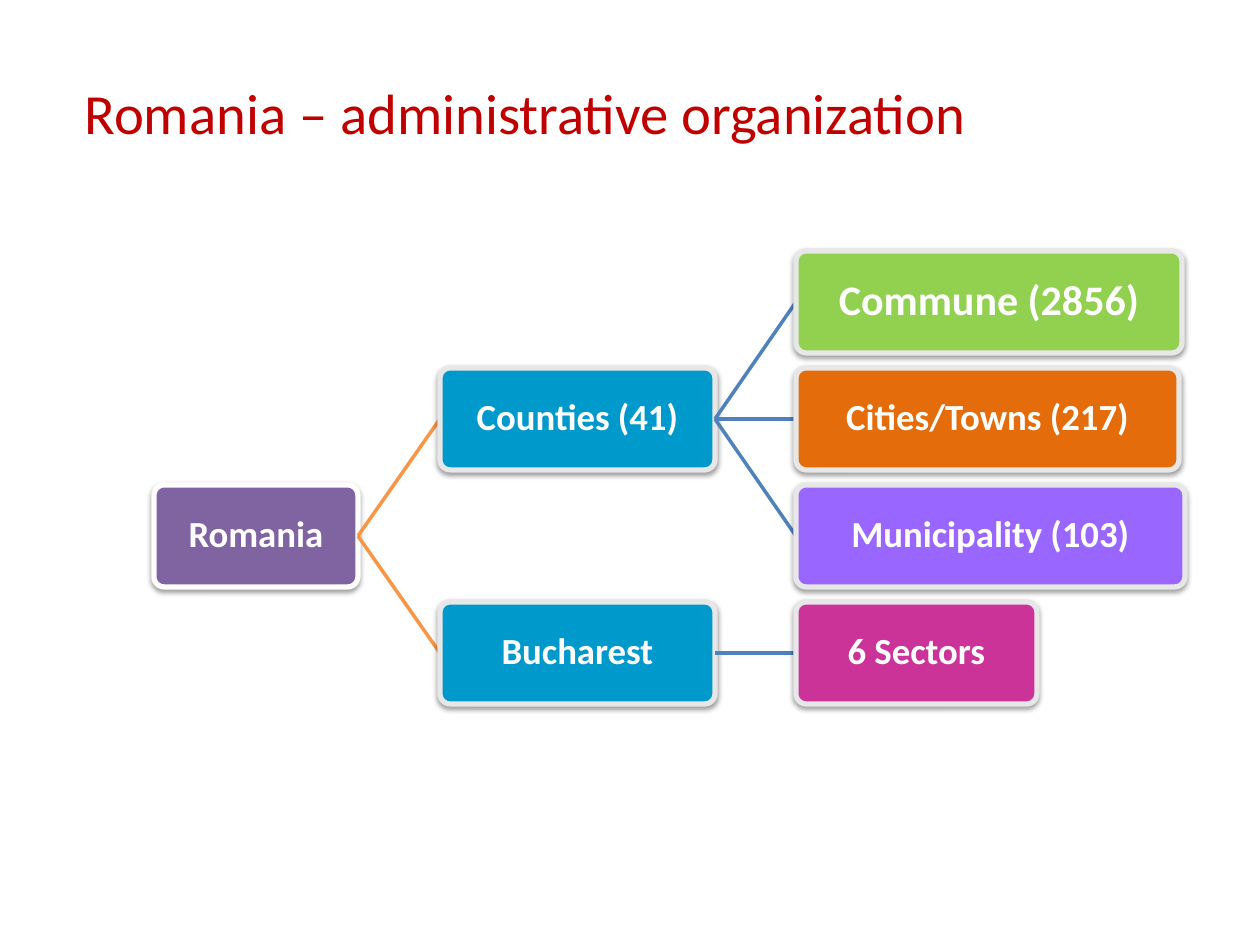
from dataclasses import dataclass
from typing import Optional

from lxml.etree import SubElement
from pptx import Presentation
from pptx.dml.color import RGBColor
from pptx.enum.shapes import MSO_CONNECTOR, MSO_SHAPE
from pptx.enum.text import MSO_ANCHOR, PP_ALIGN
from pptx.oxml.ns import qn
from pptx.util import Emu, Pt

EMU_PER_PX = 914400 / 126
FONT = "Calibri"
COLORS = {
    "title": "C00000", "white": "FFFFFF", "border": "E7E7E7", "shadow": "000000",
    "country": "8064A2", "region": "0099CC", "commune": "92D050", "city": "E46C0A",
    "municipality": "9966FF", "sector": "CC3399",
    "country link": "F79646", "region link": "4F81BD",
}

# Tree grid: three columns, four rows
COLUMNS = (154, 440, 796)
FIRST_ROW, ROW_PITCH, BOX_HEIGHT = 251, 117, 102


@dataclass(frozen=True)
class Node:
    text: str
    column: int
    row: int
    width: int
    fill: str
    parent: Optional["Node"] = None
    link: str = "region link"
    border: str = "border"
    size: int = 21
    inset: int = 1

    @property
    def left(self) -> int:
        return COLUMNS[self.column]

    @property
    def top(self) -> int:
        return FIRST_ROW + self.row * ROW_PITCH

    @property
    def right(self) -> int:
        return self.left + self.width

    @property
    def middle(self) -> int:
        return self.top + BOX_HEIGHT // 2


ROMANIA = Node("Romania", 0, 2, 204, "country", border="white")
COUNTIES = Node("Counties (41)", 1, 1, 275, "region", ROMANIA, "country link")
BUCHAREST = Node("Bucharest", 1, 3, 275, "region", ROMANIA, "country link")
NODES = (
    ROMANIA,
    COUNTIES,
    Node("Commune (2856)", 2, 0, 386, "commune", COUNTIES, size=24, inset=2),
    Node("Cities/Towns (217)", 2, 1, 383, "city", COUNTIES),
    Node("Municipality (103)", 2, 2, 389, "municipality", COUNTIES),
    BUCHAREST,
    Node("6 Sectors", 2, 3, 241, "sector", BUCHAREST),
)


def px(value: int) -> Emu:
    return Emu(round(value * EMU_PER_PX))


def color(name: str) -> RGBColor:
    return RGBColor.from_string(COLORS[name])


def write_text(frame, text: str, size: float, color_name: str, bold: bool = False) -> None:
    frame.word_wrap = True
    frame.vertical_anchor = MSO_ANCHOR.MIDDLE
    paragraph = frame.paragraphs[0]
    paragraph.alignment = PP_ALIGN.CENTER
    run = paragraph.add_run()
    run.text = text
    run.font.name = FONT
    run.font.size = Pt(size)
    run.font.bold = bold
    run.font.color.rgb = color(color_name)


def add_shadow(shape) -> None:
    shape.shadow.inherit = False
    effects = shape._element.spPr.find(qn("a:effectLst"))
    shadow = SubElement(effects, qn("a:outerShdw"), blurRad=str(Pt(3.1)),
                        dist=str(Pt(1.6)), dir="5400000", rotWithShape="0")
    shade = SubElement(shadow, qn("a:srgbClr"), val=COLORS["shadow"])
    SubElement(shade, qn("a:alpha"), val="38000")


def add_link(slide, node: Node) -> None:
    parent = node.parent
    connector = slide.shapes.add_connector(
        MSO_CONNECTOR.STRAIGHT, px(parent.right), px(parent.middle),
        px(node.left), px(node.middle))
    connector.line.color.rgb = color(node.link)
    connector.line.width = Pt(2)
    SubElement(connector._element.spPr, qn("a:effectLst"))


def add_box(slide, node: Node) -> None:
    shape = slide.shapes.add_shape(
        MSO_SHAPE.ROUNDED_RECTANGLE, px(node.left), px(node.top),
        px(node.width), px(BOX_HEIGHT))
    shape.adjustments[0] = 0.1
    shape.fill.solid()
    shape.fill.fore_color.rgb = color(node.fill)
    shape.line.color.rgb = color(node.border)
    shape.line.width = Pt(3)
    add_shadow(shape)
    frame = shape.text_frame
    frame.margin_left = frame.margin_right = px(node.inset)
    frame.margin_top = frame.margin_bottom = px(node.inset)
    write_text(frame, node.text, node.size, "white", bold=True)
    frame.paragraphs[0].line_spacing = 0.9


def main() -> None:
    presentation = Presentation()
    presentation.slide_width = px(1260)
    presentation.slide_height = px(945)
    slide = presentation.slides.add_slide(presentation.slide_layouts[6])

    # Title
    title = slide.shapes.add_textbox(px(63), px(38), px(924), px(147))
    write_text(title.text_frame, "Romania – administrative organization", 32.4, "title")

    # Administrative tree
    for node in NODES:
        if node.parent:
            add_link(slide, node)
        add_box(slide, node)

    presentation.save("out.pptx")


if __name__ == "__main__":
    main()
